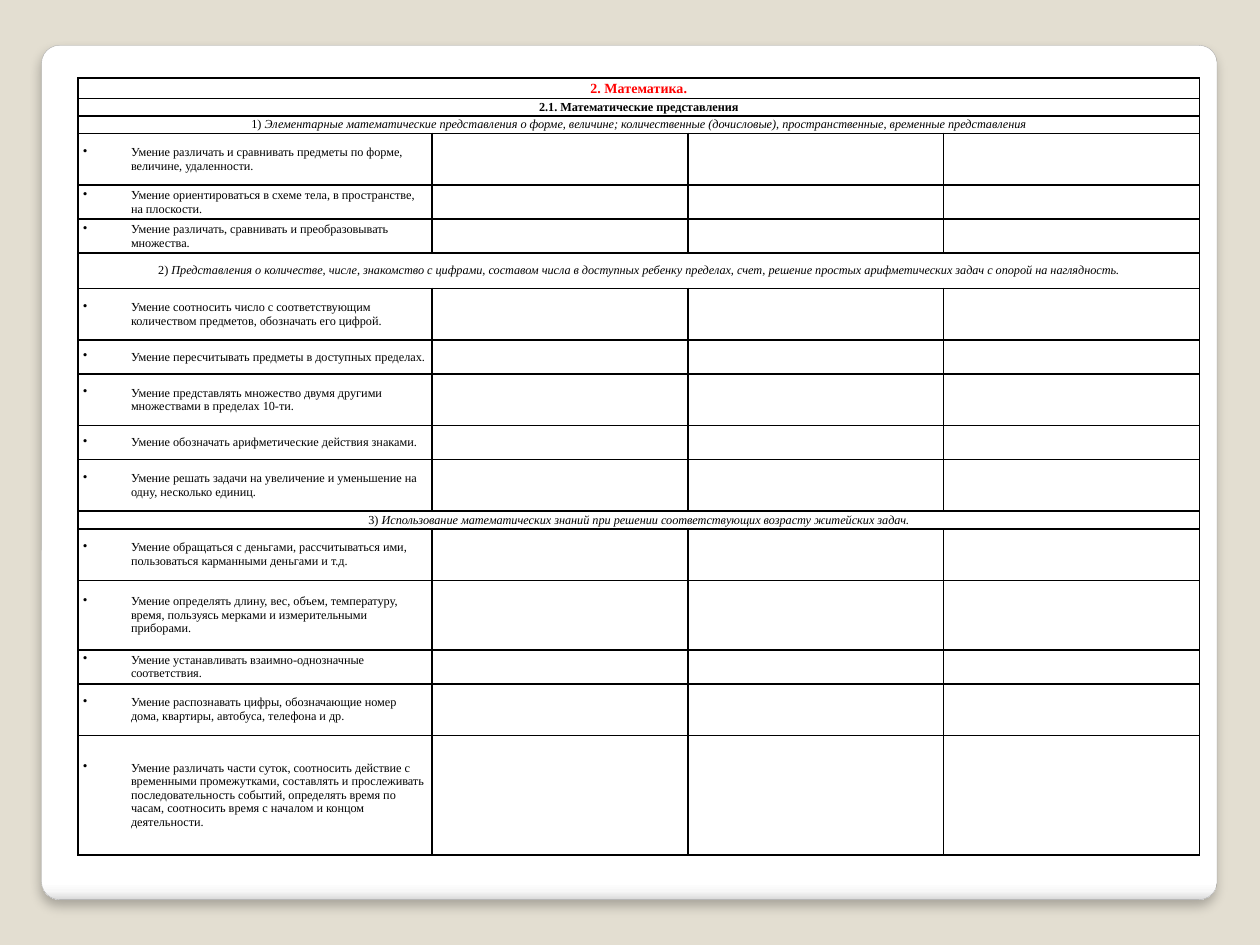
import pptx
import pptx.util
import pptx.dml.color
import pptx.enum.shapes
import pptx.enum.text
import pptx.oxml.ns
from lxml import etree

Inches, Pt = pptx.util.Inches, pptx.util.Pt
qn = pptx.oxml.ns.qn

COLORS = {"page": "E3DED1", "edge": "A4A4A4", "heading": "FF0000", "text": "000000"}
CARD_STOPS = [(0, "FFFFFF"), (98, "FFFFFF"), (99, "F7F7F7"), (100, "DADADA")]
FONT = "Times New Roman"
COLUMN_WIDTHS = [2.81, 2.03, 2.03, 2.03]

# (kind, row height in inches, text); a section has a number and an italic name
ROWS = [
    ("heading", 0.16, "2. Математика."),
    ("subheading", 0.14, "2.1. Математические представления"),
    ("section", 0.14, ("1)", " Элементарные математические представления о форме, величине; "
                       "количественные (дочисловые), пространственные, временные представления")),
    ("skill", 0.41, "Умение различать и сравнивать предметы по форме, величине, удаленности."),
    ("skill", 0.27, "Умение ориентироваться в схеме тела, в пространстве, на плоскости."),
    ("skill", 0.27, "Умение различать, сравнивать и преобразовывать множества."),
    ("section", 0.28, ("2)", " Представления о количестве, числе, знакомство с цифрами, составом числа "
                       "в доступных ребенку пределах, счет, решение простых арифметических задач "
                       "с опорой на наглядность.")),
    ("skill", 0.41, "Умение соотносить число с соответствующим количеством предметов, "
                    "обозначать его цифрой."),
    ("skill", 0.27, "Умение пересчитывать предметы в доступных пределах."),
    ("skill", 0.41, "Умение представлять множество двумя другими множествами в пределах 10-ти."),
    ("skill", 0.27, "Умение обозначать арифметические действия знаками."),
    ("skill", 0.41, "Умение решать задачи на увеличение и уменьшение на одну, несколько единиц."),
    ("section", 0.14, ("3) ", "Использование математических знаний при решении соответствующих "
                       "возрасту житейских задач.")),
    ("skill", 0.41, "Умение обращаться с деньгами, рассчитываться ими, пользоваться карманными "
                    "деньгами и т.д."),
    ("skill", 0.55, "Умение определять длину, вес, объем, температуру, время, пользуясь мерками "
                    "и измерительными приборами."),
    ("skill", 0.27, "Умение устанавливать взаимно-однозначные соответствия."),
    ("skill", 0.41, "Умение распознавать цифры, обозначающие номер дома, квартиры, автобуса, "
                    "телефона и др."),
    ("skill", 0.95, "Умение различать части суток, соотносить действие с временными промежутками, "
                    "составлять и прослеживать последовательность событий, определять время по часам, "
                    "соотносить время с началом и концом деятельности."),
]


def rgb(name):
    return pptx.dml.color.RGBColor.from_string(COLORS[name])


def add_xml(parent, tag, **attributes):
    return etree.SubElement(parent, qn(tag), {key: str(value) for key, value in attributes.items()})


def add_card(slide):
    card = slide.shapes.add_shape(pptx.enum.shapes.MSO_SHAPE.ROUNDED_RECTANGLE,
                                  Inches(0.33), Inches(0.36), Inches(9.33), Inches(6.78))
    card.adjustments[0] = 0.021
    card.fill.gradient()
    card.fill.gradient_angle = 270
    stops = card._element.spPr.find(".//" + qn("a:gsLst"))
    for stop in list(stops):
        stops.remove(stop)
    for position, color in CARD_STOPS:
        add_xml(add_xml(stops, "a:gs", pos=position * 1000), "a:srgbClr", val=color)
    card.line.color.rgb = rgb("edge")
    card.line.width = Pt(0.16)
    card.shadow.inherit = False
    shadow = add_xml(card._element.spPr.find(qn("a:effectLst")), "a:outerShdw",
                     blurRad=Pt(6), dist=Pt(4), dir=90 * 60000, rotWithShape=0)
    add_xml(add_xml(shadow, "a:srgbClr", val="000000"), "a:alpha", val=25000)


def format_cell(cell):
    cell.margin_left = cell.margin_right = Inches(0.04)
    cell.margin_top = cell.margin_bottom = 0
    cell.vertical_anchor = pptx.enum.text.MSO_ANCHOR.MIDDLE
    properties = cell._tc.get_or_add_tcPr()
    for side in ("a:lnL", "a:lnR", "a:lnT", "a:lnB"):
        border = add_xml(properties, side, w=Pt(1))
        add_xml(add_xml(border, "a:solidFill"), "a:srgbClr", val=COLORS["text"])
    cell.fill.background()
    # Keeps empty cells from stretching their rows
    add_xml(cell.text_frame.paragraphs[0]._p, "a:endParaRPr", sz=700)


def write_row(paragraph, kind, text):
    font = paragraph.font
    font.name = FONT
    font.size = Pt(8 if kind == "heading" else 7)
    font.bold = kind in ("heading", "subheading")
    font.color.rgb = rgb("heading" if kind == "heading" else "text")
    if kind == "section":
        for part, italic in zip(text, (False, True)):
            run = paragraph.add_run()
            run.text = part
            run.font.italic = italic
    else:
        paragraph.add_run().text = text
    if kind == "skill":
        properties = paragraph._p.get_or_add_pPr()
        properties.set("marL", str(Inches(0.38)))
        properties.set("indent", str(Inches(-0.38)))
        bullet = add_xml(properties, "a:buChar", char="•")
        properties.insert(0, bullet)
    else:
        paragraph.alignment = pptx.enum.text.PP_ALIGN.CENTER


def add_skill_table(slide):
    table = slide.shapes.add_table(
        len(ROWS), len(COLUMN_WIDTHS), Inches(0.62), Inches(0.62),
        Inches(sum(COLUMN_WIDTHS)), Inches(sum(height for _, height, _ in ROWS))).table
    table.first_row = table.horz_banding = False
    for column, width in zip(table.columns, COLUMN_WIDTHS):
        column.width = Inches(width)
    for cell in table.iter_cells():
        format_cell(cell)
    for index, (kind, height, text) in enumerate(ROWS):
        table.rows[index].height = Inches(height)
        first = table.cell(index, 0)
        if kind != "skill":
            first.merge(table.cell(index, len(COLUMN_WIDTHS) - 1))
        write_row(first.text_frame.paragraphs[0], kind, text)


def main():
    deck = pptx.Presentation()
    deck.slide_width, deck.slide_height = Inches(10), Inches(7.5)
    slide = deck.slides.add_slide(deck.slide_layouts[6])
    slide.background.fill.solid()
    slide.background.fill.fore_color.rgb = rgb("page")
    add_card(slide)
    add_skill_table(slide)
    deck.save("out.pptx")


if __name__ == "__main__":
    main()
